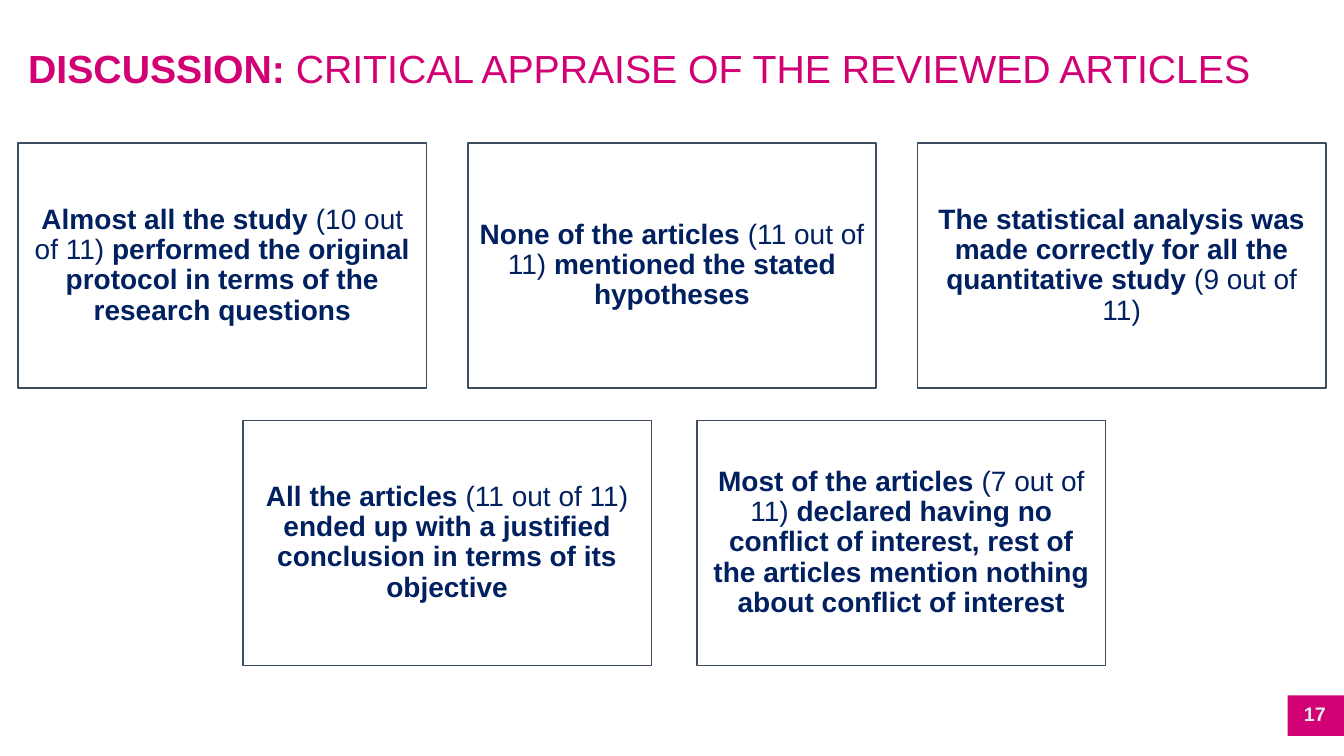
from pptx import Presentation
from pptx import util as u
from pptx.dml.color import RGBColor
from pptx.enum import shapes, text

MAGENTA = RGBColor(0xD1, 0x00, 0x74)
NAVY = RGBColor(0x00, 0x20, 0x60)
SLATE = RGBColor(0x3E, 0x4C, 0x60)
WHITE = RGBColor(0xFF, 0xFF, 0xFF)
MINT = RGBColor(0xDF, 0xEE, 0xEA)

# Card grid in inches: origin, distance between cells, card size
GRID_LEFT, GRID_TOP = 0.18, 1.42
COLUMN, ROW = 4.46, 2.75
CARD_WIDTH, CARD_HEIGHT = 4.05, 2.43

# Column, row, and text spans that alternate between bold and regular
FINDINGS = [
    (0, 0, ["Almost all the study ", "(10 out of 11)",
            " performed the original protocol in terms of the research questions"]),
    (1, 0, ["None of the articles ", "(11 out of 11) ",
            "mentioned the stated hypotheses"]),
    (2, 0, ["The statistical analysis was made correctly for all the "
            "quantitative study ", "(9 out of 11)"]),
    (0.5, 1, ["All the articles ", "(11 out of 11) ",
              "ended up with a justified conclusion in terms of its objective"]),
    (1.51, 1, ["Most of the articles ", "(7 out of 11) ",
               "declared having no conflict of interest, rest of the articles "
               "mention nothing about conflict of interest"]),
]


class SlideBuilder:
    font = "Arial"

    def __init__(self, deck):
        self.page = deck.slides.add_slide(deck.slide_layouts[5])

    def set_text(self, box, spans, size, color, align, anchor):
        """Fill a box with one paragraph whose spans alternate bold and regular."""
        frame = box.text_frame
        frame.word_wrap = True
        frame.auto_size = text.MSO_AUTO_SIZE.NONE
        frame.vertical_anchor = anchor
        para = frame.paragraphs[0]
        para.alignment = align
        para.line_spacing = 0.9
        para.font.name = self.font
        para.font.size = u.Pt(size)
        para.font.color.rgb = color
        for index, words in enumerate(spans):
            span = para.add_run()
            span.text = words
            span.font.bold = index % 2 == 0
        return frame

    def title(self, spans):
        box = self.page.shapes.title
        box.left, box.top = u.Inches(GRID_LEFT), u.Inches(0.44)
        box.width, box.height = u.Inches(12.74), u.Inches(0.57)
        self.set_text(box, spans, 28, MAGENTA, text.PP_ALIGN.LEFT,
                      text.MSO_ANCHOR.TOP)

    def rectangle(self, left, top, width, height, fill):
        box = self.page.shapes.add_shape(
            shapes.MSO_SHAPE.RECTANGLE,
            *(u.Inches(length) for length in (left, top, width, height)))
        box.shadow.inherit = False
        box.fill.solid()
        box.fill.fore_color.rgb = fill
        return box

    def card(self, column, row, spans):
        box = self.rectangle(GRID_LEFT + column * COLUMN, GRID_TOP + row * ROW,
                             CARD_WIDTH, CARD_HEIGHT, WHITE)
        box.line.color.rgb = SLATE
        box.line.width = u.Pt(1)
        frame = self.set_text(box, spans, 20, NAVY, text.PP_ALIGN.CENTER,
                              text.MSO_ANCHOR.MIDDLE)
        frame.margin_left = frame.margin_right = u.Inches(0.08)
        frame.margin_top = frame.margin_bottom = u.Inches(0.08)

    def page_number(self, number):
        box = self.rectangle(12.77, 6.9, 0.56, 0.4, MAGENTA)
        box.line.fill.background()
        frame = self.set_text(box, [number], 14, MINT, text.PP_ALIGN.RIGHT,
                              text.MSO_ANCHOR.MIDDLE)
        frame.margin_left, frame.margin_right = 0, u.Inches(0.18)


def main():
    deck = Presentation()
    deck.slide_width, deck.slide_height = u.Inches(13.33), u.Inches(7.5)
    builder = SlideBuilder(deck)

    # Heading
    builder.title(["DISCUSSION: ", "CRITICAL APPRAISE OF THE REVIEWED ARTICLES"])

    # Findings, three cards above two
    for column, row, spans in FINDINGS:
        builder.card(column, row, spans)

    # Page number badge
    builder.page_number("17")

    deck.save("out.pptx")


if __name__ == "__main__":
    main()
